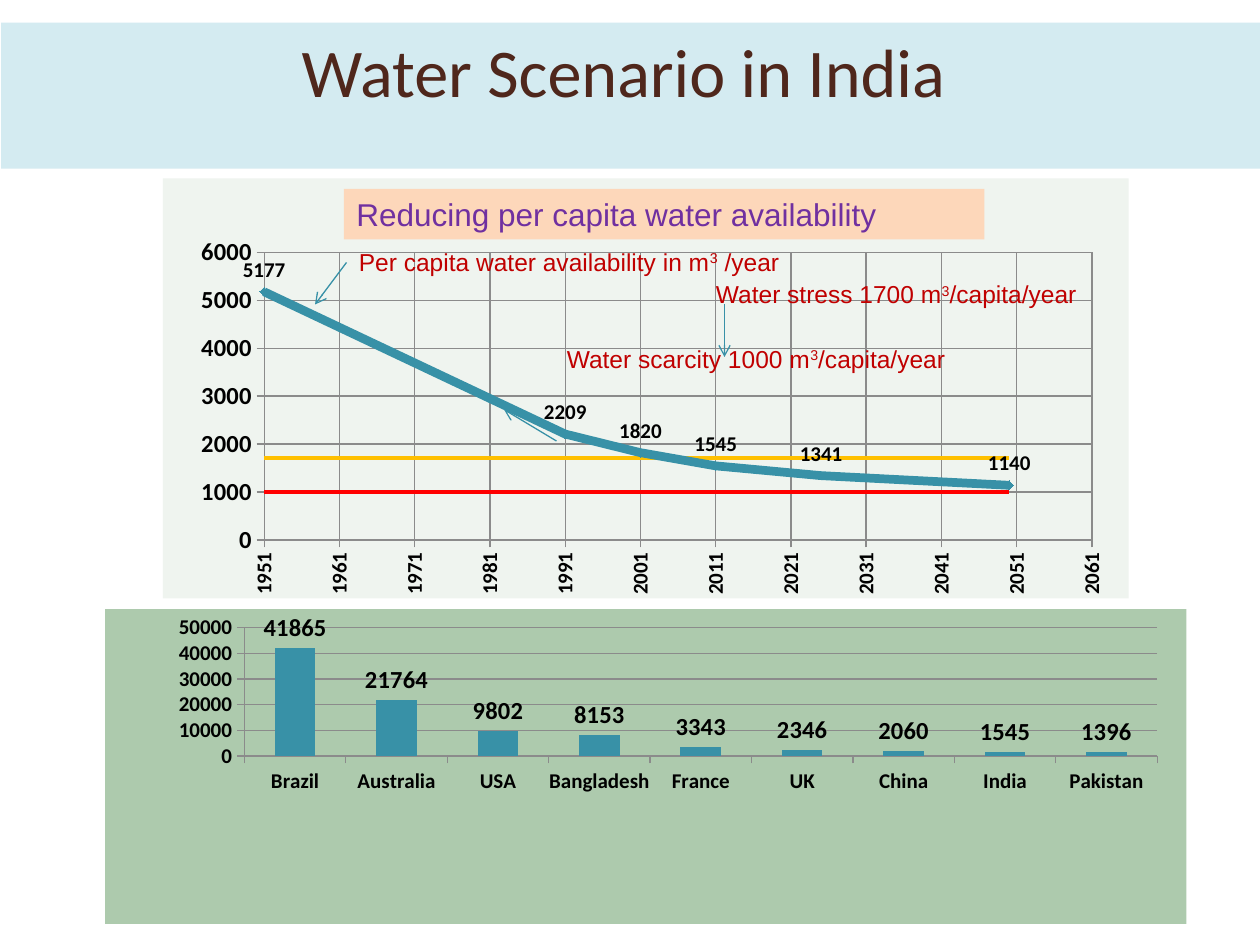
from lxml import etree
from pptx import Presentation
from pptx import util as u
from pptx.chart import data, datalabel
from pptx.dml import color
from pptx.enum import chart as ch
from pptx.enum import shapes, text
from pptx.oxml import ns

COLS, ROWS = 120, 90
UNIT = u.Inches(10) / COLS
TEAL, GRID, BLACK, RED = "3891A7", "8B8B8B", "000000", "C00000"
CUBE = "³"


def grid(*cells):
    """Turn grid steps into slide lengths."""
    return [round(cell * UNIT) for cell in cells]


def paint(part, code):
    """Give a fill or line format a solid colour."""
    fill = part if hasattr(part, "solid") else part.fill
    fill.solid()
    fill.fore_color.rgb = color.RGBColor.from_string(code)


def style(font, size, code=BLACK, bold=None, name="Calibri"):
    """Set the looks of a font."""
    font.size, font.bold, font.name = u.Pt(size), bold, name
    paint(font, code)


def write(shape, runs, size, code, name="Arial", align=text.PP_ALIGN.LEFT):
    """Write runs into a shape, raising each one that is a lone 3."""
    frame = shape.text_frame
    frame.word_wrap = True
    frame.vertical_anchor = text.MSO_ANCHOR.TOP
    para = frame.paragraphs[0]
    para.alignment = align
    for words in runs:
        run = para.add_run()
        run.text = words
        style(run.font, size, code, name=name)
        if words == "3":
            run.font._element.set("baseline", "30000")


def band(slide, box, fill, words, *look, **kw):
    """Add a filled bar with text."""
    shape = slide.shapes.add_shape(shapes.MSO_SHAPE.RECTANGLE, *grid(*box))
    shape.shadow.inherit = False
    paint(shape.fill, fill)
    shape.line.fill.background()
    write(shape, [words], *look, **kw)


def note(slide, box, *runs):
    """Add a red label over the chart."""
    write(slide.shapes.add_textbox(*grid(*box)), runs, 14, RED)


def arrow(slide, *ends):
    """Add a thin arrow between two grid points."""
    line = slide.shapes.add_connector(shapes.MSO_CONNECTOR.STRAIGHT, *grid(*ends))
    paint(line.line, TEAL)
    line.line.width = u.Pt(0.75)
    etree.SubElement(line.line._get_or_add_ln(), ns.qn("a:tailEnd"), type="arrow")
    etree.SubElement(line._element.spPr, ns.qn("a:effectLst"))


def place(chart, fill, shares):
    """Fill the chart area and fix the inner plot frame."""
    space = chart._chartSpace
    prop = etree.Element(ns.qn("c:spPr"))
    solid = etree.SubElement(prop, ns.qn("a:solidFill"))
    etree.SubElement(solid, ns.qn("a:srgbClr"), val=fill)
    edge = etree.SubElement(prop, ns.qn("a:ln"))
    etree.SubElement(edge, ns.qn("a:noFill"))
    space.find(ns.qn("c:chart")).addnext(prop)
    area = space.xpath("c:chart/c:plotArea")[0]
    for old in area.findall(ns.qn("c:layout")):
        area.remove(old)
    lay = etree.Element(ns.qn("c:layout"))
    area.insert(0, lay)
    man = etree.SubElement(lay, ns.qn("c:manualLayout"))
    pairs = [("layoutTarget", "inner"), ("xMode", "edge"), ("yMode", "edge")]
    for tag, val in pairs + list(zip("xywh", shares)):
        etree.SubElement(man, ns.qn("c:" + tag), val=str(val))


def scale(axis, size, lines, span=None):
    """Style an axis; span holds its low end, high end and step."""
    style(axis.tick_labels.font, size, bold=True)
    axis.major_tick_mark = ch.XL_TICK_MARK.OUTSIDE
    axis.minor_tick_mark = ch.XL_TICK_MARK.NONE
    paint(axis.format.line, GRID)
    axis.has_major_gridlines = lines
    if lines:
        paint(axis.major_gridlines.format.line, GRID)
    if span:
        axis.minimum_scale, axis.maximum_scale, axis.major_unit = span


def label(line, size, spot):
    """Show the values of a series in bold."""
    tags = datalabel.DataLabels(line._element.get_or_add_dLbls())
    style(tags.font, size, bold=True)
    tags.show_value = True
    tags.position = spot


def plot(slide, kind, box, facts, fill, shares):
    """Add a bare chart and return it."""
    chart = slide.shapes.add_chart(kind, *grid(*box), facts).chart
    chart.has_title = chart.has_legend = False
    style(chart.font, 10)
    chart.plots[0].vary_by_categories = False
    place(chart, fill, shares)
    return chart


def trend(slide):
    """Add the scatter chart of water per head with its two limits."""
    years = [1951, 1991, 2001, 2011, 2025, 2050]
    rows = [[5177, 2209, 1820, 1545, 1341, 1140], [1700] * 6, [1000] * 6]
    facts = data.XyChartData()
    for num, row in enumerate(rows, 1):
        line = facts.add_series(f"Series {num}")
        for year, val in zip(years, row):
            line.add_data_point(year, val)
    chart = plot(slide, ch.XL_CHART_TYPE.XY_SCATTER_LINES, (15.5, 17, 92, 40),
                 facts, "EFF4EF", (0.105, 0.176, 0.857, 0.685))
    scale(chart.category_axis, 12, True, (1951, 2061, 10))
    scale(chart.value_axis, 14, True, (0, 6000, 1000))
    body = chart.category_axis._element.xpath("c:txPr/a:bodyPr")[0]
    body.set("rot", "-5400000")
    body.set("vert", "horz")
    looks = [(TEAL, 5), ("FFC000", 2.25), ("FF0000", 2.25)]
    for line, (code, wide) in zip(chart.plots[0].series, looks):
        line.smooth = False
        paint(line.format.line, code)
        line.format.line.width = u.Pt(wide)
        line.marker.style = ch.XL_MARKER_STYLE.NONE
    first = chart.plots[0].series[0]
    first.marker.style = ch.XL_MARKER_STYLE.AUTOMATIC
    first.marker.size = 5
    paint(first.marker.format.fill, "002060")
    label(first, 12, ch.XL_LABEL_POSITION.ABOVE)


def lands(slide):
    """Add the column chart of water per head by country."""
    facts = data.CategoryChartData()
    facts.categories = ["Brazil", "Australia", "USA", "Bangladesh", "France",
                        "UK", "China", "India", "Pakistan"]
    facts.add_series("Series 1", [41865, 21764, 9802, 8153, 3343, 2346, 2060, 1545, 1396])
    chart = plot(slide, ch.XL_CHART_TYPE.COLUMN_CLUSTERED, (10, 58, 103, 30),
                 facts, "ADCAAD", (0.129, 0.059, 0.844, 0.408))
    scale(chart.category_axis, 12, False)
    scale(chart.value_axis, 12, True, (0, 50000, 10000))
    chart.plots[0].gap_width = 150
    bars = chart.plots[0].series[0]
    paint(bars.format.fill, TEAL)
    label(bars, 14, ch.XL_LABEL_POSITION.OUTSIDE_END)


def main():
    """Build the slide and save it."""
    deck = Presentation()
    deck.slide_width, deck.slide_height = grid(COLS, ROWS)
    slide = deck.slides.add_slide(deck.slide_layouts[6])
    trend(slide)
    lands(slide)
    band(slide, (0.12, 2.16, 120, 13.92), "D4EBF1", "Water Scenario in India ",
         39, "4F271C", "Calibri", align=text.PP_ALIGN.CENTER)
    band(slide, (32.76, 18, 61, 4.8), "FDD7BA",
         "Reducing per capita water availability", 18, "7030A0")
    note(slide, (33, 22.92, 56, 4.08), "Per capita water availability in m", "3", " /year")
    arrow(slide, 33, 25, 30, 29)
    note(slide, (67, 26, 50, 4.08), "Water stress 1700 m", "3", "/capita/year")
    arrow(slide, 69, 29, 69, 34)
    note(slide, (52.8, 32.16, 49, 4.08), "Water scarcity 1000 m", "3", "/capita/year")
    arrow(slide, 53, 42, 48, 39)
    deck.save("out.pptx")


if __name__ == "__main__":
    main()
